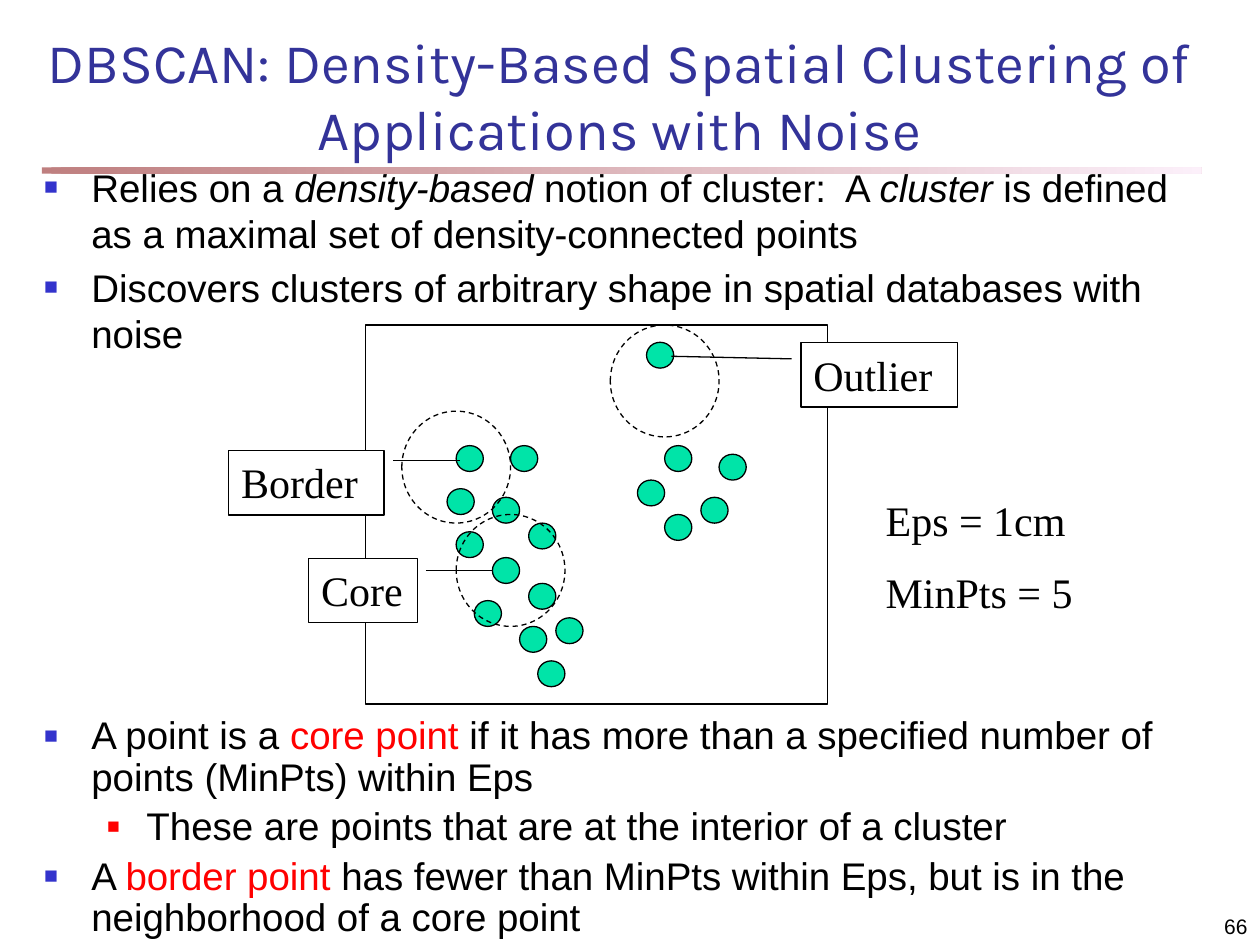
from dataclasses import dataclass

from lxml.etree import SubElement
from pptx import Presentation
from pptx.dml.color import RGBColor
from pptx.enum.dml import MSO_LINE
from pptx.enum.shapes import MSO_SHAPE
from pptx.enum.text import MSO_ANCHOR, MSO_AUTO_SIZE, PP_ALIGN
from pptx.oxml.ns import qn
from pptx.util import Pt


@dataclass(frozen=True)
class Theme:
    title: str = "333399"
    text: str = "000000"
    accent: str = "FF0000"
    bullet: str = "3333CC"
    dot: str = "00E4A8"
    white: str = "FFFFFF"
    rule_start: str = "800000"
    rule_end: str = "FAE2F6"
    title_size: int = 32
    body_size: int = 22
    label_size: int = 24
    number_size: int = 12
    title_font: str = "Karla"
    body_font: str = "Arial"
    label_font: str = "Times New Roman"


theme = Theme()


def write_paragraph(para, runs, size, font, color=theme.text, align=PP_ALIGN.LEFT,
                    before=0, spacing=1.0, bullet=None, bullet_size=60, margin=0, hanging=0):
    para.alignment = align
    para.space_before = Pt(before)
    para.line_spacing = spacing
    properties = para._p.get_or_add_pPr()
    properties.set("marL", str(Pt(margin)))
    properties.set("indent", str(Pt(-hanging)))
    if bullet:
        bullet_color = SubElement(properties, qn("a:buClr"))
        SubElement(bullet_color, qn("a:srgbClr"), val=bullet)
        SubElement(properties, qn("a:buSzPct"), val=str(bullet_size * 1000))
        SubElement(properties, qn("a:buFont"), typeface=font)
        SubElement(properties, qn("a:buChar"), char="■")
    for text, style in runs:
        span = para.add_run()
        span.text = text
        span.font.size = Pt(size)
        span.font.name = font
        span.font.italic = style == "italic"
        span.font.color.rgb = RGBColor.from_string(theme.accent if style == "accent" else color)


def draw_shape(shapes, kind, left, top, width, height, fill=None, dash=None):
    shape = shapes.add_shape(kind, Pt(left), Pt(top), Pt(width), Pt(height))
    shape.shadow.inherit = False
    if fill:
        shape.fill.solid()
        shape.fill.fore_color.rgb = RGBColor.from_string(fill)
    else:
        shape.fill.background()
    shape.line.color.rgb = RGBColor.from_string(theme.text)
    shape.line.width = Pt(0.75)
    if dash:
        shape.line.dash_style = dash
    return shape


deck = Presentation()
deck.slide_width, deck.slide_height = Pt(720), Pt(540)
page = deck.slides.add_slide(deck.slide_layouts[1])
title, body = page.placeholders

rule = draw_shape(page.shapes, MSO_SHAPE.RECTANGLE, 24, 95.6, 662.4, 3.6)
rule.line.fill.background()
rule.fill.gradient()
rule.fill.gradient_angle = 0
for stop, color in zip(rule.fill.gradient_stops, (theme.rule_start, theme.rule_end)):
    stop.color.rgb = RGBColor.from_string(color)
for color_element in rule._element.spPr.iter(qn("a:srgbClr")):
    SubElement(color_element, qn("a:alpha"), val="50000")
page.shapes._spTree.insert(2, rule._element)

title.left, title.top, title.width, title.height = Pt(18), Pt(18), Pt(672), Pt(78)
title.text_frame.auto_size = MSO_AUTO_SIZE.NONE
title.text_frame.vertical_anchor = MSO_ANCHOR.BOTTOM
write_paragraph(title.text_frame.paragraphs[0],
                [("DBSCAN: Density-Based Spatial Clustering of Applications with Noise", "")],
                theme.title_size, theme.title_font, theme.title, PP_ALIGN.CENTER)

body.left, body.top, body.width, body.height = Pt(18), Pt(90), Pt(672), Pt(450)
body.text_frame.auto_size = MSO_AUTO_SIZE.NONE
body.text_frame.vertical_anchor = MSO_ANCHOR.TOP
points = [
    (0, 1.0, 4.4, [("Relies on a ", ""), ("density-based", "italic"),
                   (" notion of cluster:  A ", ""), ("cluster", "italic"),
                   (" is defined as a maximal set of density-connected points", "")]),
    (0, 1.0, 4.4, [("Discovers clusters of arbitrary shape in spatial databases with noise", "")]),
    (0, 0.9, 206, [("A point is a ", ""), ("core point", "accent"),
                   (" if it has more than a specified number of points (MinPts) within Eps", "")]),
    (1, 0.9, 4.4, [("These are points that are at the interior of a cluster", "")]),
    (0, 0.9, 4.4, [("A ", ""), ("border point", "accent"),
                   (" has fewer than MinPts within Eps, but is in the neighborhood of a core point", "")]),
]
for index, (level, spacing, before, runs) in enumerate(points):
    para = body.text_frame.add_paragraph() if index else body.text_frame.paragraphs[0]
    para.level = level
    write_paragraph(para, runs, theme.body_size, theme.body_font, before=before, spacing=spacing,
                    bullet=theme.accent if level else theme.bullet,
                    bullet_size=55 if level else 60,
                    margin=58.5 if level else 27, hanging=22.5 if level else 27)

diagram = page.shapes.add_group_shape().shapes
origin_x, origin_y, step_x, step_y = 255.5, 195.6, 5.18, 4.92
dots = [(1, 12), (0, 17), (5, 18), (7, 12), (9, 21), (1, 22), (5, 25), (3, 30), (8, 33),
        (10, 37), (9, 28), (12, 32), (22, 0), (24, 12), (21, 16), (28, 18), (30, 13), (24, 20)]
neighborhoods = [(-5, 8), (1, 20), (18, -2)]
grid_shapes = [(MSO_SHAPE.OVAL, column, row, 3, 3, theme.dot, None) for column, row in dots]
grid_shapes.append((MSO_SHAPE.RECTANGLE, -9, -2, 51, 44, None, None))
grid_shapes += [(MSO_SHAPE.OVAL, column, row, 12, 13, None, MSO_LINE.DASH)
                for column, row in neighborhoods]
for kind, column, row, columns, rows, fill, dash in grid_shapes:
    draw_shape(diagram, kind, origin_x + column * step_x, origin_y + row * step_y,
               columns * step_x, rows * step_y, fill, dash)

callouts = [
    ("Core", 176.4, 319, 62, (0.19, 1.08, 0.19, 1.69)),
    ("Border", 130.8, 257.5, 88.6, (0.15, 1.06, 0.15, 1.49)),
    ("Outlier", 457.7, 195.9, 89.3, (0.25, -0.06, 0.21, -0.83)),
]
for text, left, top, width, leader in callouts:
    callout = draw_shape(diagram, MSO_SHAPE.LINE_CALLOUT_1, left, top, width, 36.7, theme.white)
    for index, value in enumerate(leader):
        callout.adjustments[index] = value
    callout.text_frame.word_wrap = True
    callout.text_frame.vertical_anchor = MSO_ANCHOR.TOP
    write_paragraph(callout.text_frame.paragraphs[0], [(text, "")],
                    theme.label_size, theme.label_font)

parameters = diagram.add_textbox(Pt(499), Pt(279.2), Pt(129.6), Pt(79.2))
parameters.text_frame.word_wrap = True
for index, text in enumerate(("Eps = 1cm", "MinPts = 5")):
    para = parameters.text_frame.add_paragraph() if index else parameters.text_frame.paragraphs[0]
    write_paragraph(para, [(text, "")], theme.label_size, theme.label_font, before=12)

number = page.shapes.add_textbox(Pt(570), Pt(510), Pt(150), Pt(30))
number.text_frame.word_wrap = True
number.text_frame.vertical_anchor = MSO_ANCHOR.BOTTOM
write_paragraph(number.text_frame.paragraphs[0], [("66", "")],
                theme.number_size, theme.body_font, align=PP_ALIGN.RIGHT)

deck.save("out.pptx")
